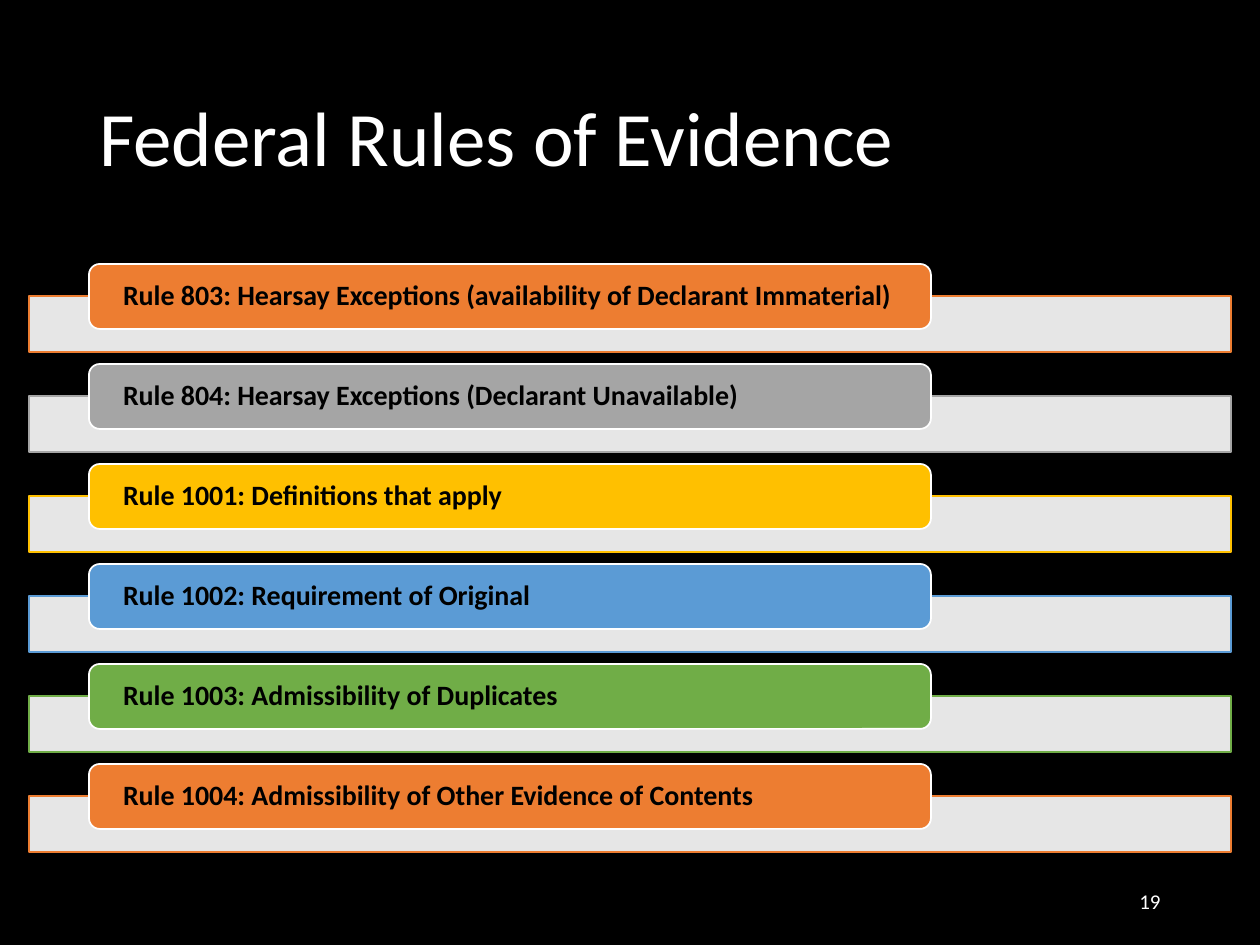
import dataclasses

import pptx
import pptx.dml.color
import pptx.enum.shapes
import pptx.enum.text
import pptx.oxml.ns
import pptx.util
from lxml import etree

SHAPE = pptx.enum.shapes.MSO_SHAPE
ALIGN = pptx.enum.text.PP_ALIGN


@dataclasses.dataclass(frozen=True)
class Theme:
    font: str = "Calibri"
    background: str = "000000"
    light: str = "FFFFFF"
    dark: str = "000000"
    accents: tuple = ("ED7D31", "A5A5A5", "FFC000", "5B9BD5", "70AD47")
    bar_alpha: int = 90
    title_size: int = 44
    rule_size: int = 16
    number_size: int = 12
    line_width: int = 1
    line_spacing: float = 0.9


RULES = (
    "Rule 803: Hearsay Exceptions (availability of Declarant Immaterial)",
    "Rule 804: Hearsay Exceptions (Declarant Unavailable)",
    "Rule 1001: Definitions that apply",
    "Rule 1002: Requirement of Original",
    "Rule 1003: Admissibility of Duplicates",
    "Rule 1004: Admissibility of Other Evidence of Contents",
)
ROW_TOP, ROW_PITCH = 264, 100


def px(n):
    return pptx.util.Emu(round(n * 914400 / 126))


def rgb(value):
    return pptx.dml.color.RGBColor.from_string(value)


class SlideBuilder:
    """Draws styled elements on the current slide."""

    def __init__(self, prs, theme):
        self.theme = theme
        self.s = prs.slides.add_slide(prs.slide_layouts[6])
        fill = self.s.background.fill
        fill.solid()
        fill.fore_color.rgb = rgb(theme.background)

    def set_text(self, sp, text, size, color, bold=False, align=ALIGN.LEFT, spacing=1.0):
        tf = sp.text_frame
        tf.word_wrap = True
        tf.vertical_anchor = pptx.enum.text.MSO_ANCHOR.MIDDLE
        tf.text = text
        p = tf.paragraphs[0]
        p.alignment = align
        p.line_spacing = spacing
        r = p.runs[0]
        r.font.name = self.theme.font
        r.font.size = pptx.util.Pt(size)
        r.font.bold = bold
        r.font.color.rgb = rgb(color)

    def text(self, box, text, size, **style):
        sp = self.s.shapes.add_textbox(*map(px, box))
        self.set_text(sp, text, size, self.theme.light, **style)

    def shape(self, kind, box, fill, line):
        sp = self.s.shapes.add_shape(kind, *map(px, box))
        sp.shadow.inherit = False
        sp.fill.solid()
        sp.fill.fore_color.rgb = rgb(fill)
        sp.line.color.rgb = rgb(line)
        sp.line.width = pptx.util.Pt(self.theme.line_width)
        return sp

    def bar(self, box, color):
        sp = self.shape(SHAPE.RECTANGLE, box, self.theme.light, color)
        qn = pptx.oxml.ns.qn
        clr = sp.element.spPr.find(qn("a:solidFill")).find(qn("a:srgbClr"))
        etree.SubElement(clr, qn("a:alpha"), val=str(self.theme.bar_alpha * 1000))

    def label(self, box, text, color):
        sp = self.shape(SHAPE.ROUNDED_RECTANGLE, box, color, self.theme.light)
        tf = sp.text_frame
        tf.margin_left = tf.margin_right = px(31)
        tf.margin_top = tf.margin_bottom = 0
        self.set_text(sp, text, self.theme.rule_size, self.theme.dark,
                      bold=True, spacing=self.theme.line_spacing)


def main():
    theme = Theme()
    prs = pptx.Presentation()
    prs.slide_width, prs.slide_height = px(1260), px(945)
    slide = SlideBuilder(prs, theme)
    slide.text((87, 50, 1086, 183), "Federal Rules of Evidence",
               theme.title_size, spacing=theme.line_spacing)
    for i, rule in enumerate(RULES):
        top = ROW_TOP + i * ROW_PITCH
        color = theme.accents[i % len(theme.accents)]
        slide.bar((29, top + 32, 1202, 56), color)
        slide.label((89, top, 842, 65), rule, color)
    slide.text((890, 876, 283, 50), "19", theme.number_size, align=ALIGN.RIGHT)
    prs.save("out.pptx")


if __name__ == "__main__":
    main()
